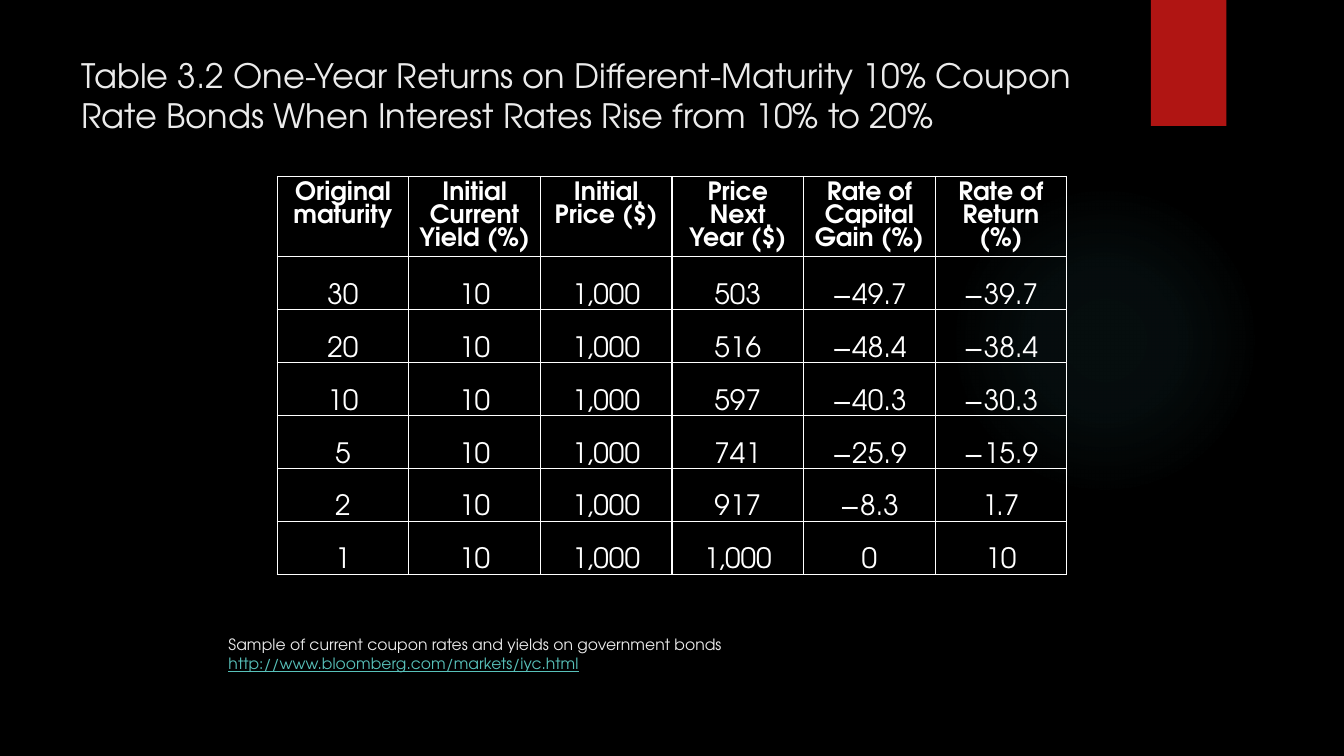
from collections import namedtuple

from lxml.etree import SubElement
from pptx import Presentation
from pptx.dml.color import RGBColor
from pptx.enum.shapes import MSO_SHAPE as Shape
from pptx.enum.text import MSO_ANCHOR as Anchor, PP_ALIGN as Align
from pptx.oxml import parse_xml
from pptx.oxml.ns import nsdecls, qn
from pptx.util import Inches, Pt

COLUMNS, ROWS = 160, 90
FONT = "TeX Gyre Adventor"
WHITE, PALE, TEAL, RED, BLACK, GLOW = "FFFFFF", "EBEBEB", "58C1BA", "B01513", "000000", "50B9C1"

Box = namedtuple("Box", "left top width height")

TITLE = ("Table 3.2 One-Year Returns on Different-Maturity 10% Coupon Rate Bonds "
         "When Interest Rates Rise from 10% to 20%")
HEADINGS = ["Original maturity", "Initial Current Yield (%)", "Initial Price ($)",
            "Price Next Year ($)", "Rate of Capital Gain (%)", "Rate of Return (%)"]
RETURNS = [
    ["30", "10", "1,000", "503", "−49.7", "−39.7"],
    ["20", "10", "1,000", "516", "−48.4", "−38.4"],
    ["10", "10", "1,000", "597", "−40.3", "−30.3"],
    ["5", "10", "1,000", "741", "−25.9", "−15.9"],
    ["2", "10", "1,000", "917", "−8.3", "1.7"],
    ["1", "10", "1,000", "1,000", "0", "10"],
]
SOURCE_LINES = [
    ("Sample of current coupon rates and yields on government bonds", PALE, False),
    ("http://www.bloomberg.com/markets/iyc.html", TEAL, True),
]


def color(value):
    return RGBColor.from_string(value)


def grid_box(deck, left, top, width, height):
    column, row = deck.slide_width / COLUMNS, deck.slide_height / ROWS
    return Box(round(left * column), round(top * row), round(width * column), round(height * row))


def place(shape, box):
    shape.left, shape.top, shape.width, shape.height = box


def style(para, size, hex_color, bold=False, underline=False):
    font = para.font
    font.name, font.size, font.bold, font.underline = FONT, Pt(size), bold, underline
    font.color.rgb = color(hex_color)


def add_plain_shape(page, kind, box, hex_color):
    shape = page.shapes.add_shape(kind, *box)
    shape.shadow.inherit = False
    shape.fill.solid()
    shape.fill.fore_color.rgb = color(hex_color)
    shape.line.fill.background()
    return shape


def add_glow(page, box):
    glow = add_plain_shape(page, Shape.OVAL, box, GLOW)
    stops = "".join(
        f'<a:gs pos="{position}000"><a:srgbClr val="{GLOW}"><a:alpha val="{alpha}000"/></a:srgbClr></a:gs>'
        for position, alpha in [(0, 7), (36, 6), (69, 0), (100, 0)])
    gradient = parse_xml(
        f'<a:gradFill {nsdecls("a")}><a:gsLst>{stops}</a:gsLst><a:path path="circle">'
        '<a:fillToRect l="50000" t="50000" r="50000" b="50000"/></a:path></a:gradFill>')
    properties = glow.element.spPr
    properties.replace(properties.find(qn("a:solidFill")), gradient)


def add_title(page, box):
    title = page.shapes.title
    place(title, box)
    title.text_frame.vertical_anchor = Anchor.TOP
    para = title.text_frame.paragraphs[0]
    para.text = TITLE
    para.alignment = Align.LEFT
    style(para, 24, PALE)


def add_source(page, box):
    body = page.placeholders[1]
    place(body, box)
    frame = body.text_frame
    frame.text = "\n".join(text for text, _, _ in SOURCE_LINES)
    for para, (_, hex_color, underline) in zip(frame.paragraphs, SOURCE_LINES):
        properties = para._p.get_or_add_pPr()
        properties.set("marL", str(Inches(0.38)))
        properties.set("indent", str(Inches(-0.38)))
        para.space_before = Pt(0)
        SubElement(properties, qn("a:buNone"))
        style(para, 11.1, hex_color, underline=underline)


def add_borders(cell):
    properties = cell._tc.get_or_add_tcPr()
    for side in "LRTB":
        properties.append(parse_xml(
            f'<a:ln{side} {nsdecls("a")} w="{Pt(1)}"><a:solidFill><a:srgbClr val="{WHITE}"/>'
            f'</a:solidFill></a:ln{side}>'))


def fill_cell(cell, text, is_heading):
    add_borders(cell)
    cell.fill.background()
    para = cell.text_frame.paragraphs[0]
    para.text = text
    para.alignment = Align.CENTER
    if is_heading:
        style(para, 18, WHITE, bold=True)
    else:
        cell.vertical_anchor = Anchor.BOTTOM
        cell.margin_left = cell.margin_right = cell.margin_top = Inches(0.01)
        cell.margin_bottom = 0
        style(para, 20, WHITE)


def add_returns_table(page, box):
    lines = [HEADINGS] + RETURNS
    table = page.shapes.add_table(len(lines), len(HEADINGS), *box).table
    table.first_row = table.horz_banding = False
    heading_height = round(box.height * 0.2)
    line_height = (box.height - heading_height) // len(RETURNS)
    for row_index, line in enumerate(lines):
        is_heading = row_index == 0
        table.rows[row_index].height = heading_height if is_heading else line_height
        for column_index, text in enumerate(line):
            fill_cell(table.cell(row_index, column_index), text, is_heading)


def build_returns_slide(deck):
    page = deck.slides.add_slide(deck.slide_layouts[1])
    page.background.fill.solid()
    page.background.fill.fore_color.rgb = color(BLACK)
    add_glow(page, grid_box(deck, 113, 22, 37, 37))
    add_plain_shape(page, Shape.RECTANGLE, grid_box(deck, 137, 0, 9, 15), RED)
    add_title(page, grid_box(deck, 8.5, 5.9, 123.5, 18.4))
    add_source(page, grid_box(deck, 26, 75, 108, 5.4))
    add_returns_table(page, grid_box(deck, 33, 21, 94, 47.3))


def main():
    deck = Presentation()
    deck.slide_width, deck.slide_height = Inches(13.33), Inches(7.5)
    build_returns_slide(deck)
    deck.save("out.pptx")


if __name__ == "__main__":
    main()
